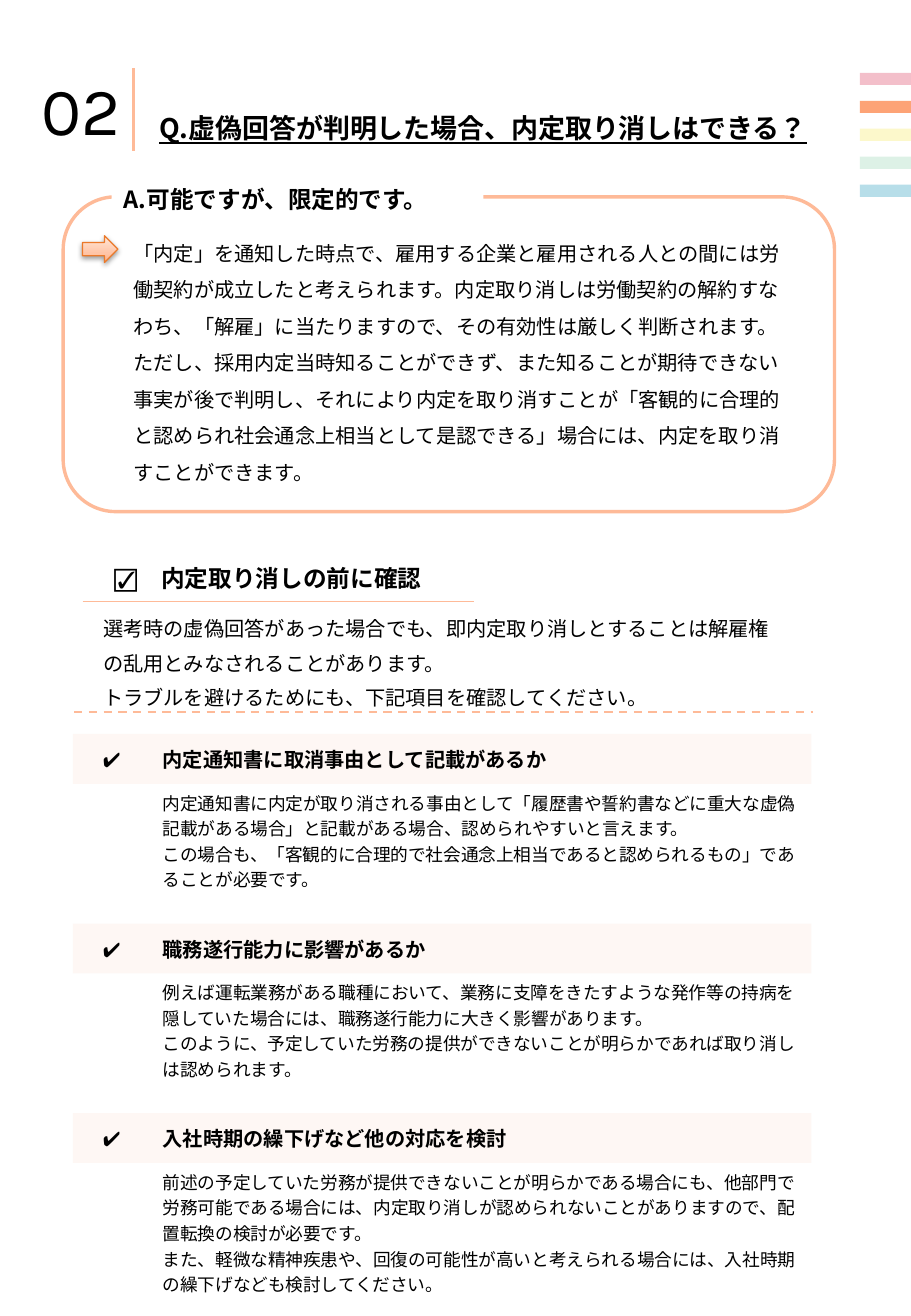
from lxml import etree
from pptx import Presentation
from pptx.dml.color import RGBColor
from pptx.enum.dml import MSO_LINE
from pptx.enum.lang import MSO_LANGUAGE_ID
from pptx.enum.shapes import MSO_CONNECTOR, MSO_SHAPE
from pptx.enum.text import MSO_ANCHOR, PP_ALIGN
from pptx.oxml.ns import qn
from pptx.util import Inches, Pt

RECT, ROUNDED, ARROW = MSO_SHAPE.RECTANGLE, MSO_SHAPE.ROUNDED_RECTANGLE, MSO_SHAPE.RIGHT_ARROW
LEFT, CENTER, JUSTIFY = PP_ALIGN.LEFT, PP_ALIGN.CENTER, PP_ALIGN.JUSTIFY
TOP, MIDDLE = MSO_ANCHOR.TOP, MSO_ANCHOR.MIDDLE
STRAIGHT, DASH = MSO_CONNECTOR.STRAIGHT, MSO_LINE.DASH
JAPANESE = MSO_LANGUAGE_ID.JAPANESE

BLACK = RGBColor(0x00, 0x00, 0x00)
WHITE = RGBColor(0xFF, 0xFF, 0xFF)
PEACH = RGBColor(0xFE, 0xBA, 0x98)
ARROW_EDGE = RGBColor(0xEB, 0x79, 0x2A)
ARROW_STOPS = [(0, "FFAF82"), (35, "FFC5A7"), (100, "FFE8DA")]
INDEX_BARS = [
    (RGBColor(0xDD, 0x49, 0x68), 35),
    (RGBColor(0xFD, 0x9A, 0x69), 91),
    (RGBColor(0xF9, 0xEB, 0x6B), 35),
    (RGBColor(0x9F, 0xD9, 0xB8), 35),
    (RGBColor(0x31, 0xA2, 0xC2), 35),
]
SANS, NUMBER_FONT = "Noto Sans CJK JP", "Karla"
PLAIN_TABLE_STYLE = "{2D5ABB26-0587-4C30-8999-92F81FD0307C}"

ANSWER = [
    "「内定」を通知した時点で、雇用する企業と雇用される人との間には労働契約が成立したと考えられます。"
    "内定取り消しは労働契約の解約すなわち、「解雇」に当たりますので、その有効性は厳しく判断されます。",
    "ただし、採用内定当時知ることができず、また知ることが期待できない事実が後で判明し、"
    "それにより内定を取り消すことが「客観的に合理的と認められ社会通念上相当として是認できる」場合には、"
    "内定を取り消すことができます。",
]
CHECK_INTRO = [
    "選考時の虚偽回答があった場合でも、即内定取り消しとすることは解雇権の乱用とみなされることがあります。",
    "トラブルを避けるためにも、下記項目を確認してください。",
]
CHECKS = [
    ("内定通知書に取消事由として記載があるか", [
        "内定通知書に内定が取り消される事由として「履歴書や誓約書などに重大な虚偽記載がある場合」と"
        "記載がある場合、認められやすいと言えます。",
        "この場合も、「客観的に合理的で社会通念上相当であると認められるもの」であることが必要です。"]),
    ("職務遂行能力に影響があるか", [
        "例えば運転業務がある職種において、業務に支障をきたすような発作等の持病を隠していた場合には、"
        "職務遂行能力に大きく影響があります。",
        "このように、予定していた労務の提供ができないことが明らかであれば取り消しは認められます。"]),
    ("入社時期の繰下げなど他の対応を検討", [
        "前述の予定していた労務が提供できないことが明らかである場合にも、他部門で労務可能である場合には、"
        "内定取り消しが認められないことがありますので、配置転換の検討が必要です。",
        "また、軽微な精神疾患や、回復の可能性が高いと考えられる場合には、"
        "入社時期の繰下げなども検討してください。"]),
]


def place(*lengths):
    return [Inches(length) for length in lengths]


def write(frame, paragraphs, size, font=SANS, bold=False, underline=False, align=LEFT, spacing=None):
    frame.word_wrap = True
    for i, text in enumerate(paragraphs):
        paragraph = frame.paragraphs[0] if i == 0 else frame.add_paragraph()
        paragraph.alignment = align
        if spacing:
            paragraph.line_spacing = spacing
        run = paragraph.add_run()
        run.text = text
        style = run.font
        style.size, style.bold, style.underline = Pt(size), bold, underline
        style.language_id = JAPANESE
        style.color.rgb = BLACK
        style.name = font
        etree.SubElement(run._r.rPr, qn("a:ea"), typeface=font)


def tint(fill, element, color, opacity):
    """Fill with a colour that is see-through below 100 percent opacity."""
    fill.solid()
    fill.fore_color.rgb = color
    if opacity < 100:
        rgb = next(element.iter(qn("a:srgbClr")))
        etree.SubElement(rgb, qn("a:alpha"), val=str(opacity * 1000))


def add_block(shapes, kind, box, color=WHITE, opacity=100, edge=None, width=0):
    block = shapes.add_shape(kind, *place(*box))
    block.shadow.inherit = False
    tint(block.fill, block._element, color, opacity)
    if edge is None:
        block.line.fill.background()
    else:
        block.line.color.rgb = edge
        block.line.width = Pt(width)
    return block


def add_heading(slide, box, text, size, **style):
    heading = add_block(slide.shapes, RECT, box)
    heading.text_frame.vertical_anchor = MIDDLE
    write(heading.text_frame, [text], size, bold=True, **style)


def add_text(slide, box, paragraphs, size, spacing):
    frame = slide.shapes.add_textbox(*place(*box)).text_frame
    frame.vertical_anchor = MIDDLE
    write(frame, paragraphs, size, spacing=spacing)


def add_rule(slide, ends, width, dash=None):
    rule = slide.shapes.add_connector(STRAIGHT, *place(*ends))
    rule.line.color.rgb = PEACH
    rule.line.width = Pt(width)
    if dash:
        rule.line.dash_style = dash
    etree.SubElement(rule._element.spPr, qn("a:effectLst"))


def add_number(slide):
    frame = slide.shapes.add_textbox(*place(0.34, 0.56, 0.91, 0.67)).text_frame
    frame.margin_left = frame.margin_right = frame.margin_top = frame.margin_bottom = 0
    write(frame, ["02"], 40, font=NUMBER_FONT, align=JUSTIFY)


def add_arrow(slide):
    arrow = add_block(slide.shapes, ARROW, (0.68, 1.94, 0.29, 0.22), edge=ARROW_EDGE, width=0.75)
    arrow.fill.gradient()
    arrow.fill.gradient_angle = 90
    properties = arrow._element.spPr
    stops = next(properties.iter(qn("a:gsLst")))
    for stop in list(stops):
        stops.remove(stop)
    for position, color in ARROW_STOPS:
        stop = etree.SubElement(stops, qn("a:gs"), pos=str(position * 1000))
        etree.SubElement(stop, qn("a:srgbClr"), val=color)
    shadow = etree.SubElement(properties.find(qn("a:effectLst")), qn("a:outerShdw"),
                              blurRad=str(Pt(3.1)), dist=str(Pt(1.6)), dir="5400000", rotWithShape="0")
    shade = etree.SubElement(shadow, qn("a:srgbClr"), val=str(BLACK))
    etree.SubElement(shade, qn("a:alpha"), val="38000")


def add_checklist(slide):
    title_height, detail_height = 0.41, 1.15
    height = len(CHECKS) * (title_height + detail_height)
    table = slide.shapes.add_table(2 * len(CHECKS), 2, *place(0.6, 6.04, 6.08, height)).table
    table.first_row = table.horz_banding = False
    next(table._tbl.iter(qn("a:tableStyleId"))).text = PLAIN_TABLE_STYLE
    for column, width in zip(table.columns, (0.64, 5.44)):
        column.width = Inches(width)
    for i, (title, details) in enumerate(CHECKS):
        title_row, detail_row = 2 * i, 2 * i + 1
        table.rows[title_row].height = Inches(title_height)
        table.rows[detail_row].height = Inches(detail_height)
        for column in range(2):
            title_cell, detail_cell = table.cell(title_row, column), table.cell(detail_row, column)
            tint(title_cell.fill, title_cell._tc, PEACH, 10)
            detail_cell.fill.background()
            title_cell.vertical_anchor, detail_cell.vertical_anchor = MIDDLE, TOP
        write(table.cell(title_row, 0).text_frame, ["✔"], 12, align=CENTER)
        write(table.cell(title_row, 1).text_frame, [title], 12, bold=True)
        write(table.cell(detail_row, 1).text_frame, details, 10.5)


def add_index_bars(slide):
    bars = slide.shapes.add_group_shape().shapes
    for i, (color, opacity) in enumerate(INDEX_BARS):
        add_block(bars, RECT, (7.08, 0.6 + 0.23 * i, 0.42, 0.1), color, opacity)


def main():
    deck = Presentation()
    deck.slide_width, deck.slide_height = place(7.5, 10.83)
    slide = deck.slides.add_slide(deck.slide_layouts[6])

    add_number(slide)
    add_rule(slide, (1.1, 1.24, 1.1, 0.56), 1.5)

    answer_frame = add_block(slide.shapes, ROUNDED, (0.52, 1.62, 6.35, 2.59), edge=PEACH, width=2)
    answer_frame.adjustments[0] = 0.167
    add_heading(slide, (0.92, 1.44, 3.06, 0.39), "A.可能ですが、限定的です。", 14)
    add_text(slide, (1, 1.89, 5.64, 2.09), ANSWER, 12, 1.5)
    add_arrow(slide)

    add_heading(slide, (0.84, 4.56, 4.53, 0.39), "☑　内定取り消しの前に確認", 14)
    add_rule(slide, (0.68, 4.95, 3.9, 4.95), 0.75)
    add_text(slide, (0.75, 5, 5.81, 0.83), CHECK_INTRO, 12, 1.42)
    add_rule(slide, (0.61, 5.86, 6.69, 5.86), 1.25, DASH)
    add_checklist(slide)

    add_heading(slide, (1.13, 0.82, 5.7, 0.47), "Q.虚偽回答が判明した場合、内定取り消しはできる？", 16,
                underline=True, align=CENTER)
    add_index_bars(slide)
    deck.save("out.pptx")


if __name__ == "__main__":
    main()
